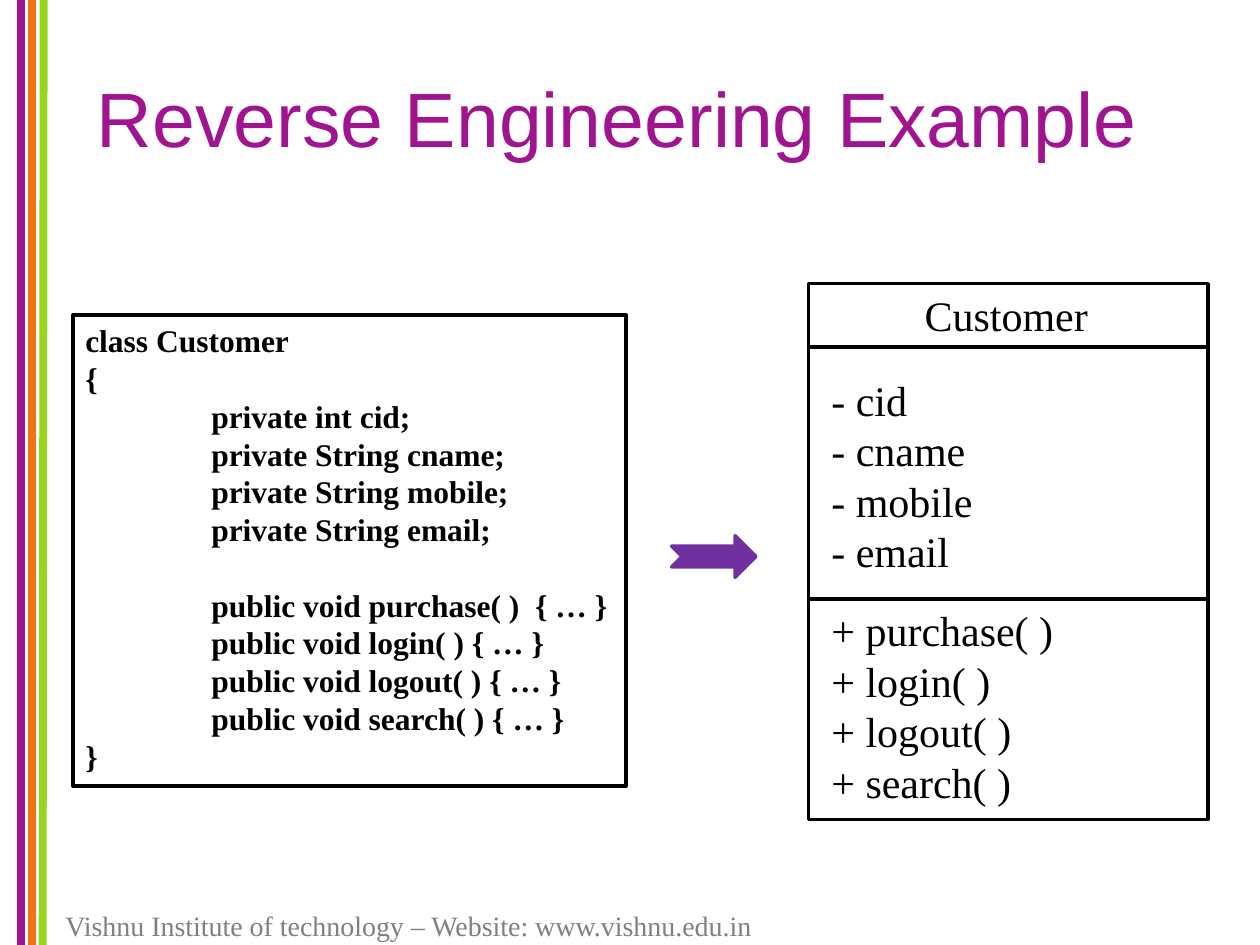
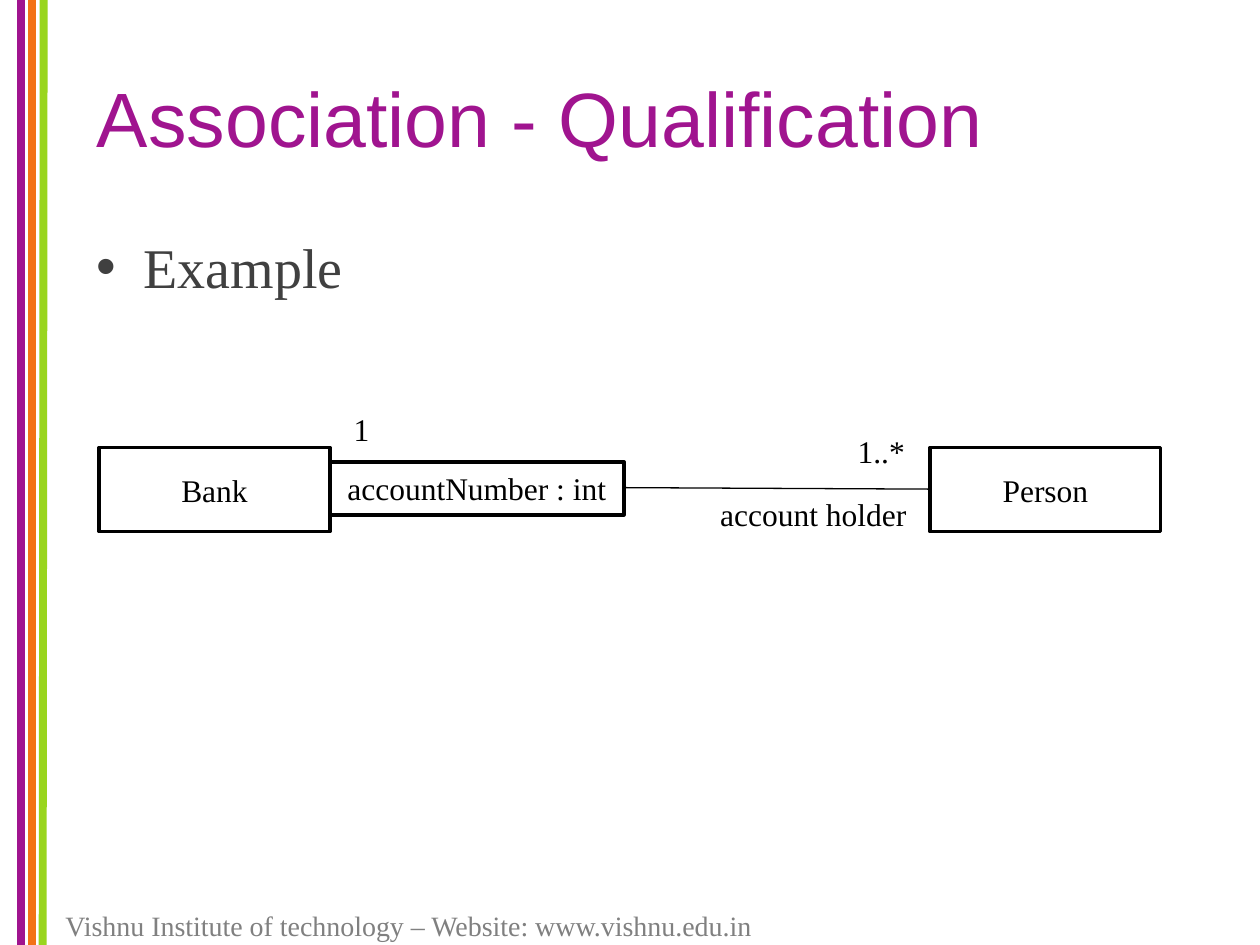
from lxml import etree
from pptx import Presentation
from pptx.dml.color import RGBColor
from pptx.enum.shapes import MSO_CONNECTOR, MSO_SHAPE
from pptx.enum.text import MSO_ANCHOR, MSO_AUTO_SIZE, PP_ALIGN
from pptx.oxml.ns import qn
from pptx.util import Cm, Pt

RECTANGLE = MSO_SHAPE.RECTANGLE
NOTCHED_ARROW = MSO_SHAPE.NOTCHED_RIGHT_ARROW
STRAIGHT = MSO_CONNECTOR.STRAIGHT
TOP, MIDDLE = MSO_ANCHOR.TOP, MSO_ANCHOR.MIDDLE
LEFT, CENTER = PP_ALIGN.LEFT, PP_ALIGN.CENTER
FIXED_SIZE = MSO_AUTO_SIZE.NONE

WIDTH, HEIGHT = 25.4, 19.05
PURPLE, BLACK, WHITE = "A0148F", "000000", "FFFFFF"
ARROW_PURPLE, BODY_GREY, FOOTER_GREY = "7030A0", "404040", "808080"
# Each band: colour, x at the top, x at the bottom
BANDS = [(PURPLE, 0.43, 0.43), ("F37216", 0.64, 0.64), ("99D51E", 0.88, 0.86)]
FOOTER = "Vishnu Institute of technology – Website: www.vishnu.edu.in"

CODE_FIELDS = ["private int cid;", "private String cname;",
               "private String mobile;", "private String email;"]
CODE_METHODS = ["public void purchase( )  { … }", "public void login( ) { … }",
                "public void logout( ) { … }", "public void search( ) { … }"]
ATTRIBUTES = ["- cid", "- cname", "- mobile", "- email"]
OPERATIONS = ["+ purchase( )", "+ login( )", "+ logout( )", "+ search( )"]


def rgb(hex_colour):
    return RGBColor.from_string(hex_colour)


def lengths(*values):
    return [Cm(value) for value in values]


def apply_format(target, values):
    for name, value in values.items():
        setattr(target, name, value)


class Deck:
    """Holds the shared style and the slide being filled."""

    def __init__(self):
        self.presentation = Presentation()
        self.presentation.slide_width = Cm(WIDTH)
        self.presentation.slide_height = Cm(HEIGHT)
        self.slide = None

    def new_slide(self, title):
        layout = self.presentation.slide_layouts.get_by_name("Title Only")
        self.slide = self.presentation.slides.add_slide(layout)
        for colour, top_x, bottom_x in BANDS:
            self.line((top_x, 0), (bottom_x, HEIGHT), 4.5, colour)
        self.text((1.07, 18.19, 14.55, 0.94), [FOOTER], 16, FOOTER_GREY)
        heading = self.slide.shapes.title
        places = zip(("left", "top", "width", "height"), lengths(1.7, 0.76, 22.43, 3.18))
        apply_format(heading, dict(places))
        self.set_lines(heading, [title], 44, PURPLE, font="Arial", anchor=MIDDLE)

    def set_lines(self, holder, lines, size, colour=BLACK, font="Times New Roman",
                  bold=False, align=LEFT, anchor=TOP):
        frame = holder.text_frame
        frame.text = "\n".join(lines)
        apply_format(frame, {"word_wrap": True, "auto_size": FIXED_SIZE,
                             "vertical_anchor": anchor})
        for paragraph in frame.paragraphs:
            paragraph.alignment = align
            for run in paragraph.runs:
                apply_format(run.font, {"name": font, "size": Pt(size), "bold": bold})
                run.font.color.rgb = rgb(colour)
        return frame

    def text(self, place, lines, size, colour=BLACK):
        box = self.slide.shapes.add_textbox(*lengths(*place))
        return self.set_lines(box, lines, size, colour)

    def bullet(self, place, line, size):
        frame = self.text(place, [line], size, BODY_GREY)
        frame.margin_top = Cm(0.24)
        properties = frame.paragraphs[0]._p.get_or_add_pPr()
        properties.set("marL", str(Cm(0.95)))
        properties.set("indent", str(Cm(-0.95)))
        etree.SubElement(properties, qn("a:buFont")).set("typeface", "Arial")
        etree.SubElement(properties, qn("a:buChar")).set("char", "•")

    def shape(self, place, kind=RECTANGLE, fill=WHITE, outline=BLACK):
        shape = self.slide.shapes.add_shape(kind, *lengths(*place))
        shape.shadow.inherit = False
        if fill:
            shape.fill.solid()
            shape.fill.fore_color.rgb = rgb(fill)
        else:
            shape.fill.background()
        shape.line.color.rgb = rgb(outline)
        shape.line.width = Pt(2)
        return shape

    def entity(self, place, name):
        self.set_lines(self.shape(place), [name], 18, align=CENTER, anchor=MIDDLE)

    def line(self, start, end, width, colour=BLACK):
        line = self.slide.shapes.add_connector(STRAIGHT, *lengths(*start, *end))
        line.line.color.rgb = rgb(colour)
        line.line.width = Pt(width)
        etree.SubElement(line._element.spPr, qn("a:effectLst"))

    def code(self, place, opening, blocks, closing):
        """Add a class whose member blocks are indented and set apart."""
        members = [member for block in blocks for member in block]
        frame = self.set_lines(self.shape(place, fill=None),
                               [*opening, *members, closing], 18, bold=True)
        first = len(opening)
        for paragraph in frame.paragraphs[first:-1]:
            paragraph._p.get_or_add_pPr().set("marL", str(Cm(2.54)))
        for block in blocks[:-1]:
            first += len(block)
            frame.paragraphs[first].space_before = Pt(21.5)


def reverse_engineering(deck):
    deck.new_slide("Reverse Engineering Example")
    deck.code((1.47, 6.35, 11.15, 9.5), ["class Customer", "{"],
              [CODE_FIELDS, CODE_METHODS], "}")
    left, width = 16.3, 8.05
    deck.shape((left, 5.72, width, 10.8))
    for divider in (6.99, 12.07):
        deck.line((left, divider), (left + width, divider), 2.25)
    deck.text((18.39, 5.72, 3.84, 1.27), ["Customer"], 24)
    for top, members in ((7.42, ATTRIBUTES), (12.07, OPERATIONS)):
        deck.text((16.51, top, 5.03, 4.37), members, 24)
    deck.shape((13.54, 10.8, 1.7, 0.84), NOTCHED_ARROW, ARROW_PURPLE, ARROW_PURPLE)


def qualification(deck):
    deck.new_slide("Association - Qualification")
    deck.bullet((1.7, 4.45, 22.43, 1.9), "Example", 32)
    for left, name in ((2, "Bank"), (18.75, "Person")):
        deck.entity((left, 9.02, 4.65, 1.7), name)
    deck.entity((6.65, 9.31, 5.93, 1.07), "accountNumber : int")
    deck.line((12.59, 9.83), (18.75, 9.86), 0.75)
    for left, top, width, label in ((14.27, 9.86, 4.45, "account holder"),
                                    (6.88, 8.15, 0.84, "1"),
                                    (17.04, 8.59, 1.47, "1..*")):
        deck.text((left, top, width, 1.02), [label], 18)


def main():
    deck = Deck()
    reverse_engineering(deck)
    qualification(deck)
    deck.presentation.save("out.pptx")


if __name__ == "__main__":
    main()
